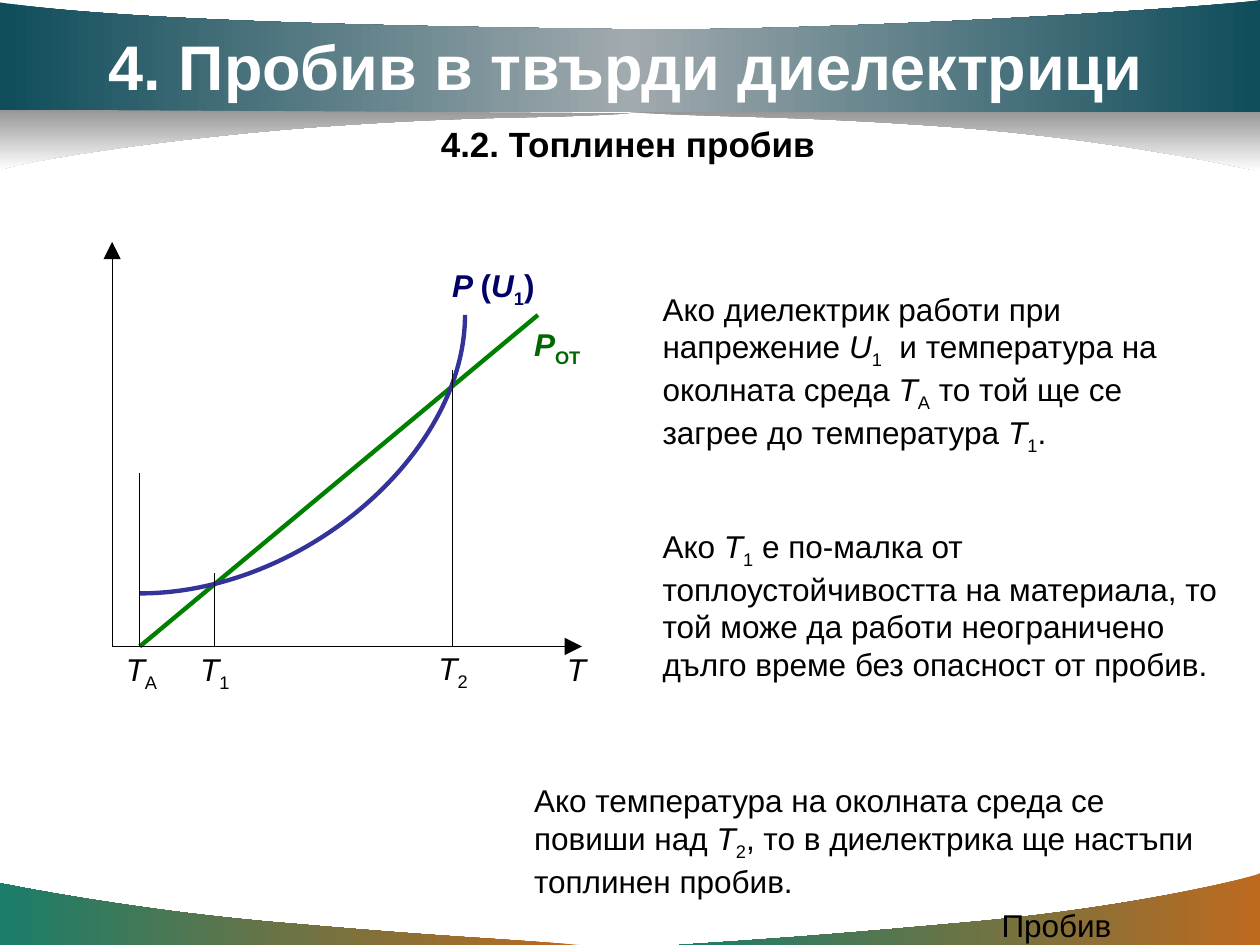
from copy import deepcopy
from dataclasses import dataclass

from lxml import etree
from pptx import Presentation
from pptx.dml.color import RGBColor
from pptx.enum import shapes, text
from pptx.oxml.ns import qn
from pptx.util import Pt

FONT = "Arial"
BLACK = RGBColor(0x00, 0x00, 0x00)
WHITE = RGBColor(0xFF, 0xFF, 0xFF)
GREY = RGBColor(0x96, 0x96, 0x96)
DARK_TEAL = RGBColor(0x0F, 0x4D, 0x5B)
SILVER = RGBColor(0xA1, 0xAA, 0xAE)
ORANGE = RGBColor(0xBD, 0x6A, 0x1F)
GREEN_TEAL = RGBColor(0x1B, 0x7D, 0x6A)
LOSS_LINE = RGBColor(0x00, 0x80, 0x00)
LOSS_TEXT = RGBColor(0x00, 0x66, 0x00)
POWER_LINE = RGBColor(0x33, 0x33, 0x99)
POWER_TEXT = RGBColor(0x00, 0x00, 0x66)


@dataclass(frozen=True)
class Band:
    """Outline in points: each segment is (x, y) for a line or three pairs for a Bezier curve."""
    start: tuple[float, float]
    segments: list[tuple[float, ...]]
    colours: list[RGBColor]
    angle: int


@dataclass(frozen=True)
class Piece:
    wording: str
    italic: bool = False
    subscript: bool = False


@dataclass(frozen=True)
class Caption:
    box: tuple[float, float, float, float]
    pieces: list[Piece]
    size: float = 18
    colour: RGBColor = BLACK
    bold: bool = False


@dataclass(frozen=True)
class Stroke:
    start: tuple[float, float]
    end: tuple[float, float]
    colour: RGBColor = BLACK
    width: float = 0.75
    arrow: bool = False
    curved: bool = False


def symbol(letter: str, index: str = "") -> list[Piece]:
    """Italic letter with an upright subscript."""
    return [Piece(letter, italic=True)] + ([Piece(index, subscript=True)] if index else [])


def draw_band(slide, band: Band) -> None:
    points = [p for s in band.segments for p in zip(s[::2], s[1::2])]
    builder = slide.shapes.build_freeform(Pt(band.start[0]), Pt(band.start[1]))
    builder.add_line_segments([(Pt(x), Pt(y)) for x, y in points], close=True)
    shape = builder.convert_to_shape()
    shape.shadow.inherit = False
    shape.line.fill.background()

    # Join each three control points into one Bezier curve
    steps = iter(list(shape.element.iter(qn("a:lnTo"))))
    for segment in band.segments:
        step = next(steps)
        if len(segment) == 6:
            curve = etree.Element(qn("a:cubicBezTo"))
            step.addprevious(curve)
            for control in (step, next(steps), next(steps)):
                curve.append(control[0])
                control.getparent().remove(control)

    shape.fill.gradient()
    shape.fill.gradient_angle = band.angle
    stop_list = next(shape.element.iter(qn("a:gsLst")))
    for _ in band.colours[2:]:
        stop_list.append(deepcopy(stop_list[0]))
    for i, (stop, colour) in enumerate(zip(shape.fill.gradient_stops, band.colours)):
        stop.position = i / (len(band.colours) - 1)
        stop.color.rgb = colour


def write_caption(shape, caption: Caption) -> None:
    shape.left, shape.top, shape.width, shape.height = map(Pt, caption.box)
    frame = shape.text_frame
    frame.word_wrap = True
    frame.auto_size = text.MSO_AUTO_SIZE.NONE
    frame.vertical_anchor = text.MSO_ANCHOR.TOP
    for piece in caption.pieces:
        run = frame.paragraphs[0].add_run()
        run.text = piece.wording
        font = run.font
        font.name, font.size = FONT, Pt(caption.size)
        font.bold, font.italic = caption.bold, piece.italic
        font.color.rgb = caption.colour
        if piece.subscript:
            run._r.get_or_add_rPr().set("baseline", "-25000")


def draw_stroke(slide, stroke: Stroke) -> None:
    kind = shapes.MSO_CONNECTOR.CURVE if stroke.curved else shapes.MSO_CONNECTOR.STRAIGHT
    connector = slide.shapes.add_connector(kind, *map(Pt, stroke.start + stroke.end))
    connector.line.color.rgb = stroke.colour
    connector.line.width = Pt(stroke.width)
    properties = connector.element.spPr
    if stroke.curved:
        properties.find(qn("a:prstGeom")).set("prst", "curvedConnector2")
    if stroke.arrow:
        etree.SubElement(connector.line._get_or_add_ln(), qn("a:tailEnd"),
                         type="triangle", w="lg", len="lg")
    etree.SubElement(properties, qn("a:effectLst"))


FOOT = [ORANGE, GREEN_TEAL]
SHADE = [GREY, WHITE]
BANDS = [
    Band((331.2, 540), [(276.5, 535.7, 257.8, 535.7, 167, 527.8),
                        (76.3, 520.6, 0.7, 504.7, 0, 504.7), (0, 540)], FOOT, 180),
    Band((388.1, 540), [(442.1, 536.4, 465.1, 535, 553.7, 527),
                        (642.2, 519.1, 712.8, 502.6, 720, 499), (720, 540)], FOOT, 180),
    Band((360, 64.1), [(420.5, 67.7, 446.4, 65.5, 545.8, 72.7),
                       (645.8, 80.6, 718.6, 97.9, 720, 97.9), (720, 63.4)], SHADE, 270),
    Band((0, 64.1), [(720, 64.1), (720, 0), (694.1, 4.3, 470.2, 18.7, 350.6, 16.6),
                     (231.1, 15.1, 72.7, 12.2, 0, 1.4)], [DARK_TEAL, SILVER, DARK_TEAL], 180),
    Band((360, 64.8), [(299.5, 68.4, 279.4, 65.5, 179.3, 72.7),
                       (79.2, 80.6, 7.9, 93.6, 0, 97.2), (0, 62.6)], SHADE, 270),
]

ORIGIN_X, AXIS_Y = 64.1, 369.4
X_AMBIENT, X_STABLE, X_CRITICAL = 79.9, 122.4, 258.5
CURVES_TOP = 180
STROKES = [
    Stroke((X_AMBIENT, AXIS_Y), (307.4, CURVES_TOP), LOSS_LINE, 2.5),
    Stroke((ORIGIN_X, AXIS_Y), (332.6, AXIS_Y), arrow=True),
    Stroke((ORIGIN_X, AXIS_Y), (ORIGIN_X, 138.2), arrow=True),
    Stroke((X_AMBIENT, 339.1), (265.7, CURVES_TOP), POWER_LINE, 2.5, curved=True),
] + [Stroke((x, top), (x, AXIS_Y))
     for x, top in ((X_AMBIENT, 270), (X_STABLE, 327.6), (X_CRITICAL, 211.7))]

TITLE = Caption((54, 12.2, 607.7, 50.4), [Piece("4. Пробив в твърди диелектрици")],
                36, WHITE, True)
CAPTIONS = [
    Caption((565.2, 514.1, 149.8, 18), [Piece("Пробив")]),
    Caption((244.8, 66.2, 229, 31), [Piece("4.2. Топлинен пробив")], 20, bold=True),
    Caption((298.1, 182.2, 59.8, 28.8), symbol("P", "ОТ"), colour=LOSS_TEXT, bold=True),
    Caption((251.3, 148.3, 72, 28.8),
            [Piece("P ", italic=True), Piece("("), *symbol("U", "1"), Piece(")")],
            colour=POWER_TEXT, bold=True),
    Caption((316.8, 367.9, 25.2, 28.8), symbol("T")),
    Caption((64.8, 367.9, 33.8, 28.8), symbol("T", "А")),
    Caption((107.3, 367.9, 32.4, 28.8), symbol("T", "1")),
    Caption((243.4, 367.2, 32.4, 28.8), symbol("T", "2")),
    Caption((371.5, 162, 331.9, 93.6),
            [Piece("Ако диелектрик работи при напрежение "), *symbol("U", "1"),
             Piece("  и температура на околната среда "), *symbol("T", "A"),
             Piece(" то той ще се загрее до температура "), *symbol("T", "1"), Piece(".")]),
    Caption((371.5, 297.4, 331.9, 93.6),
            [Piece("Ако "), *symbol("T", "1"),
             Piece(" е по-малка от топлоустойчивостта на материала, то той може да работи "
                   "неограничено дълго време без опасност от пробив.")]),
    Caption((298.1, 442.8, 404.6, 72),
            [Piece("Ако температура на околната среда се повиши над "), *symbol("T", "2"),
             Piece(", то в диелектрика ще настъпи топлинен пробив.")]),
]


def main() -> None:
    deck = Presentation()
    deck.slide_width, deck.slide_height = Pt(720), Pt(540)
    slide = deck.slides.add_slide(deck.slide_layouts[5])
    for band in BANDS:
        draw_band(slide, band)

    title = slide.shapes.title
    slide.shapes.element.append(title.element)  # bring the title in front of the bands
    write_caption(title, TITLE)
    title.text_frame.paragraphs[0].alignment = text.PP_ALIGN.CENTER

    for stroke in STROKES:
        draw_stroke(slide, stroke)
    for caption in CAPTIONS:
        write_caption(slide.shapes.add_textbox(*map(Pt, caption.box)), caption)
    deck.save("out.pptx")


if __name__ == "__main__":
    main()
